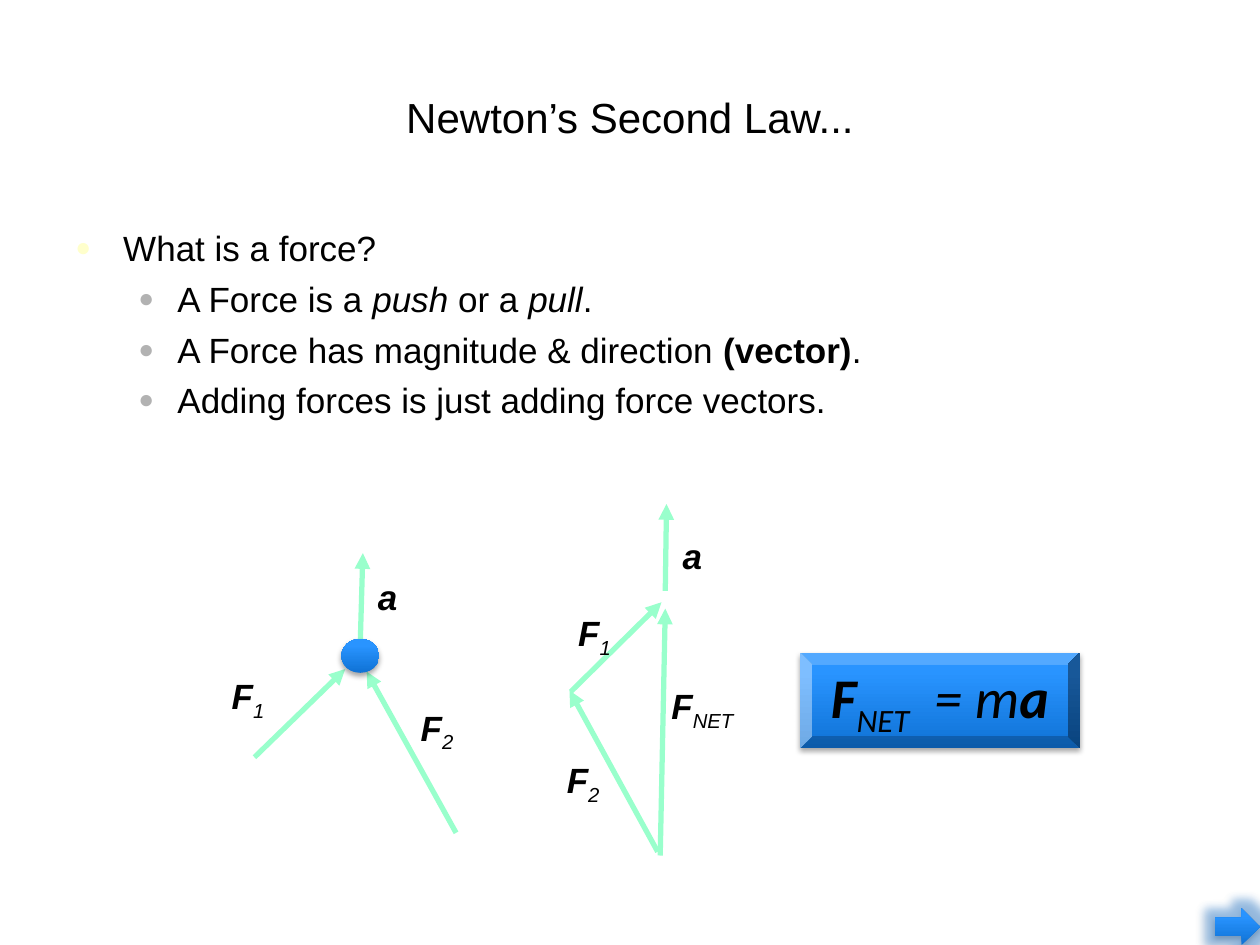
from dataclasses import dataclass

from lxml import etree
from pptx import Presentation
from pptx.dml.color import RGBColor
from pptx.enum.shapes import MSO_CONNECTOR, MSO_SHAPE
from pptx.enum.text import MSO_ANCHOR, MSO_AUTO_SIZE, PP_ALIGN
from pptx.oxml.ns import qn
from pptx.util import Inches, Pt

STRAIGHT = MSO_CONNECTOR.STRAIGHT
OVAL, BEVEL, RIGHT_ARROW = MSO_SHAPE.OVAL, MSO_SHAPE.BEVEL, MSO_SHAPE.RIGHT_ARROW
TOP, MIDDLE = MSO_ANCHOR.TOP, MSO_ANCHOR.MIDDLE
LEFT, CENTER = PP_ALIGN.LEFT, PP_ALIGN.CENTER
FIT_SHAPE = MSO_AUTO_SIZE.SHAPE_TO_FIT_TEXT


@dataclass(frozen=True)
class Theme:
    font: str = "Arial"
    formula_font: str = "Calibri"
    title_size: int = 24
    body_size: int = 20
    formula_size: int = 32
    text: str = "000000"
    vector: str = "99FFCC"
    bullet: str = "FFFFCC"
    sub_bullet: str = "B2B2B2"
    shadow: str = "000000"
    glow: str = "2B85E0"
    gradient: tuple = ((0, "0F72D5"), (80, "2994FF"), (100, "2B95FF"))


THEME = Theme()

VECTORS = [
    ((2.02, 6.01), (2.74, 5.31)),
    ((3.62, 6.61), (2.91, 5.33)),
    ((4.53, 5.49), (5.25, 4.78)),
    ((5.22, 6.76), (4.52, 5.48)),
    ((5.24, 6.79), (5.28, 4.83)),
    ((5.28, 4.69), (5.29, 4)),
    ((2.86, 5.08), (2.88, 4.39)),
]

LABELS = [
    (1.74, 5.31, 0.53, "F", "1"),
    (3.24, 5.56, 0.53, "F", "2"),
    (2.9, 4.56, 0.36, "a", ""),
    (4.49, 4.81, 0.53, "F", "1"),
    (4.4, 5.98, 0.53, "F", "2"),
    (5.32, 4.23, 0.36, "a", ""),
    (5.23, 5.39, 0.8, "F", "NET"),
]

BULLETS = [
    (0, [("What is a force?", "")]),
    (1, [("A Force is a ", ""), ("push", "i"), (" or a ", ""), ("pull", "i"), (".", "")]),
    (1, [("A Force has magnitude & direction ", ""), ("(vector)", "b"), (".", "")]),
    (1, [("Adding forces is just adding force vectors.", "")]),
]


def add_node(parent, tag, **attrs):
    return etree.SubElement(parent, qn(tag), {k: str(v) for k, v in attrs.items()})


def add_runs(p, runs, size, font=THEME.font):
    for text, style in runs:
        r = p.add_run()
        r.text = text
        r.font.name, r.font.size = font, Pt(size)
        r.font.bold, r.font.italic = "b" in style, "i" in style
        r.font.color.rgb = RGBColor.from_string(THEME.text)
        if "_" in style:
            r.font._element.set("baseline", "-25000")


def add_text(slide, box, anchor=TOP, wrap=True):
    tf = slide.shapes.add_textbox(*map(Inches, box)).text_frame
    tf.word_wrap, tf.vertical_anchor = wrap, anchor
    return tf


def add_title(slide, text):
    p = add_text(slide, (0.5, 0.3, 9, 1.25), MIDDLE).paragraphs[0]
    p.alignment = CENTER
    add_runs(p, [(text, "")], THEME.title_size)


def set_bullet(p, level):
    margin, indent, color = [
        (0.38, -0.38, THEME.bullet),
        (0.81, -0.31, THEME.sub_bullet),
    ][level]
    p.level = level
    pPr = p._p.get_or_add_pPr()
    pPr.set("marL", str(Inches(margin)))
    pPr.set("indent", str(Inches(indent)))
    add_node(add_node(pPr, "a:buClr"), "a:srgbClr", val=color)
    add_node(pPr, "a:buSzPct", val=75000)
    add_node(pPr, "a:buFont", typeface=THEME.font)
    add_node(pPr, "a:buChar", char="●")


def add_bullets(slide, bullets):
    tf = add_text(slide, (0.5, 1.75, 9, 4.95))
    for i, (level, runs) in enumerate(bullets):
        p = tf.add_paragraph() if i else tf.paragraphs[0]
        p.space_before = Pt(5)
        set_bullet(p, level)
        add_runs(p, runs, THEME.body_size)


def add_vector(slide, start, end):
    line = slide.shapes.add_connector(STRAIGHT, *map(Inches, start + end))
    line.line.color.rgb = RGBColor.from_string(THEME.vector)
    line.line.width = Pt(3)
    add_node(line.line._get_or_add_ln(), "a:tailEnd", type="triangle")
    add_node(line._element.spPr, "a:effectLst")


def add_label(slide, left, top, width, symbol, subscript):
    tf = add_text(slide, (left, top, width, 0.4), wrap=False)
    tf.auto_size = FIT_SHAPE
    p = tf.paragraphs[0]
    p.alignment, p.line_spacing = LEFT, 0.9
    runs = [(symbol, "bi")] + ([(subscript, "i_")] if subscript else [])
    add_runs(p, runs, THEME.body_size)


def add_color(parent, color, alpha):
    node = add_node(parent, "a:srgbClr", val=color)
    add_node(node, "a:alpha", val=alpha * 1000)


def add_glossy_shape(slide, kind, box, glow=False):
    sp = slide.shapes.add_shape(kind, *map(Inches, box))
    spPr = sp._element.spPr
    grad = add_node(spPr, "a:gradFill", rotWithShape=1)
    stops = add_node(grad, "a:gsLst")
    for pos, color in THEME.gradient:
        add_node(add_node(stops, "a:gs", pos=pos * 1000), "a:srgbClr", val=color)
    add_node(grad, "a:lin", ang=270 * 60000, scaled=0)
    sp.line.fill.background()
    sp.shadow.inherit = False
    effects = spPr.find(qn("a:effectLst"))
    if glow:
        add_color(add_node(effects, "a:glow", rad=Pt(11)), THEME.glow, 40)
    shadow = add_node(effects, "a:outerShdw", blurRad=Pt(3.1), dist=Pt(1.8),
                      dir=90 * 60000, rotWithShape=0)
    add_color(shadow, THEME.shadow, 35)
    return sp


def add_formula(slide):
    tf = add_glossy_shape(slide, BEVEL, (6.35, 5.18, 2.22, 0.76)).text_frame
    tf.word_wrap, tf.vertical_anchor = False, MIDDLE
    p = tf.paragraphs[0]
    p.alignment = CENTER
    runs = [("F", "bi"), ("NET", "i_"), ("  = m", "i"), ("a", "bi")]
    add_runs(p, runs, THEME.formula_size, THEME.formula_font)


def main():
    prs = Presentation()
    prs.slide_width, prs.slide_height = Inches(10), Inches(7.5)
    slide = prs.slides.add_slide(prs.slide_layouts[6])
    add_title(slide, "Newton’s Second Law...")
    add_bullets(slide, BULLETS)
    for start, end in VECTORS:
        add_vector(slide, start, end)
    add_glossy_shape(slide, OVAL, (2.71, 5.07, 0.3, 0.27))
    for label in LABELS:
        add_label(slide, *label)
    add_formula(slide)
    add_glossy_shape(slide, RIGHT_ARROW, (9.64, 7.21, 0.36, 0.29), glow=True)
    prs.save("out.pptx")


if __name__ == "__main__":
    main()
